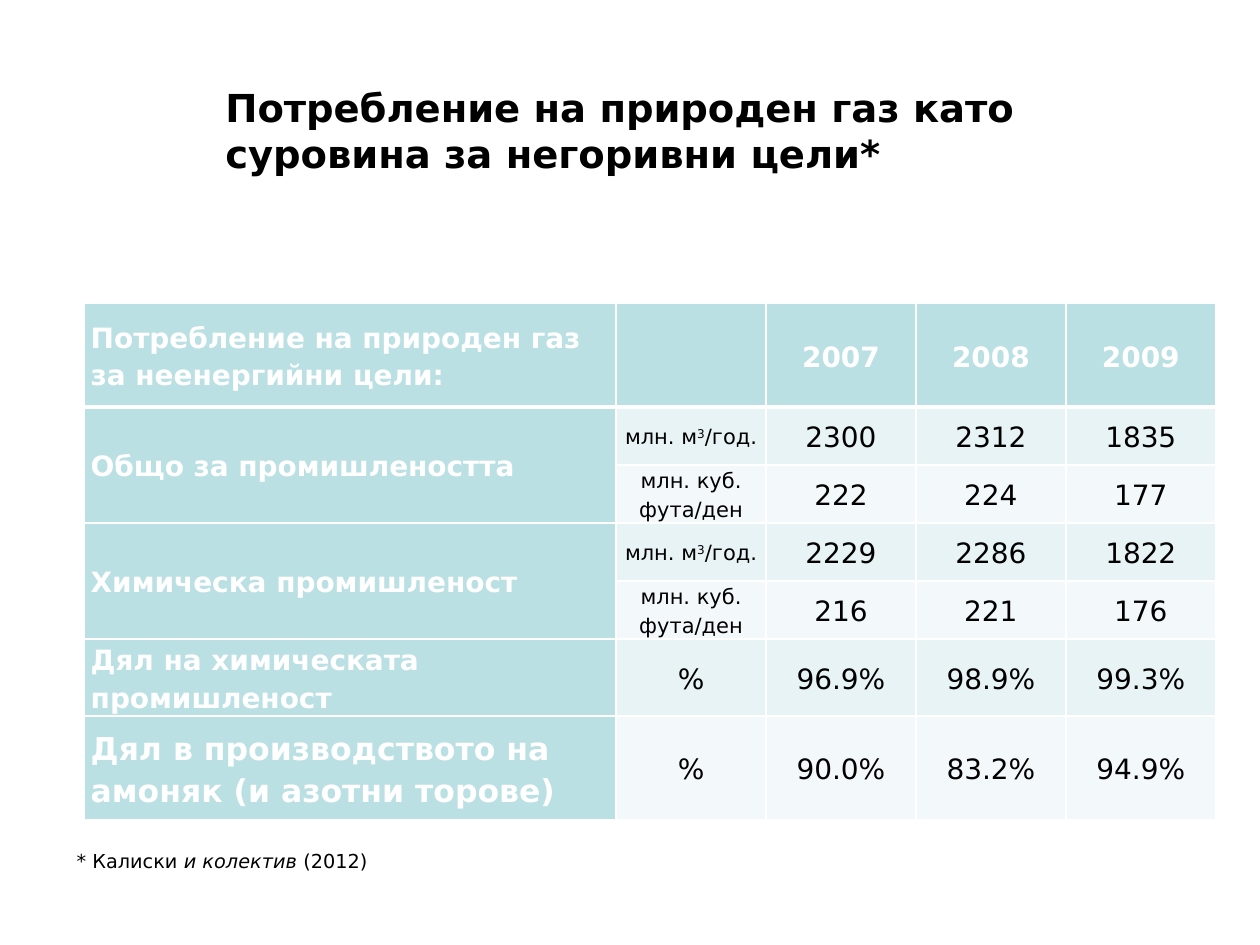
from dataclasses import dataclass

from lxml import etree
from pptx import Presentation
from pptx import util as u
from pptx.dml.color import RGBColor
from pptx.enum import text
from pptx.oxml import ns

FONT = "DejaVu Sans"
COLORS = {"ink": "000000", "white": "FFFFFF", "label": "BBE0E3",
          "odd": "E7F3F4", "even": "F3F9FA"}
YEARS = ("2007", "2008", "2009")
COLUMN_WIDTHS = (4.22, 1.19, 1.19, 1.19, 1.19)
ROW_HEIGHTS = (0.82, 0.46, 0.46, 0.46, 0.46, 0.46, 0.82)
CUBIC_METRES = ("млн. м", "3", "/год.")  # the middle part is raised
CUBIC_FEET = ("млн. куб. фута/ден",)
PERCENT = ("%",)


@dataclass
class Measure:
    unit: tuple[str, ...]
    values: tuple[str, ...]
    label: str = ""
    label_size: int = 16
    unit_size: int = 12
    label_rows: int = 1


MEASURES = [
    Measure(CUBIC_METRES, ("2300", "2312", "1835"), "Общо за промишлеността", label_rows=2),
    Measure(CUBIC_FEET, ("222", "224", "177")),
    Measure(CUBIC_METRES, ("2229", "2286", "1822"), "Химическа промишленост", label_rows=2),
    Measure(CUBIC_FEET, ("216", "221", "176")),
    Measure(PERCENT, ("96.9%", "98.9%", "99.3%"), "Дял на химическата промишленост",
            unit_size=16),
    Measure(PERCENT, ("90.0%", "83.2%", "94.9%"),
            "Дял в производството на амоняк (и азотни торове)", label_size=18, unit_size=16),
]


def set_font(paragraph, size: int, color: str, bold: bool = False) -> None:
    font = paragraph.font
    font.name, font.size, font.bold = FONT, u.Pt(size), bold
    font.color.rgb = RGBColor.from_string(COLORS[color])


def set_borders(cell, bottom: float, top: float) -> None:
    properties = cell._tc.get_or_add_tcPr()
    widths = {"lnL": 1, "lnR": 1, "lnT": top, "lnB": bottom}
    for position, (side, width) in enumerate(widths.items()):
        line = etree.Element(ns.qn(f"a:{side}"), w=str(u.Pt(width)))
        fill = etree.SubElement(line, ns.qn("a:solidFill"))
        etree.SubElement(fill, ns.qn("a:srgbClr"), val=COLORS["white"])
        properties.insert(position, line)


def fill_cell(cell, parts: tuple[str, ...], size: int, fill: str, color: str = "ink",
              bold: bool = False, centered: bool = True,
              bottom: float = 1, top: float = 1) -> None:
    cell.fill.solid()
    cell.fill.fore_color.rgb = RGBColor.from_string(COLORS[fill])
    set_borders(cell, bottom, top)
    cell.margin_left = cell.margin_right = u.Inches(0.05)
    cell.margin_top = cell.margin_bottom = 0
    cell.vertical_anchor = text.MSO_ANCHOR.MIDDLE
    paragraph = cell.text_frame.paragraphs[0]
    paragraph.alignment = text.PP_ALIGN.CENTER if centered else text.PP_ALIGN.LEFT
    paragraph.line_spacing = 1.15
    set_font(paragraph, size, color, bold)
    for index, part in enumerate(parts):
        run = paragraph.add_run()
        run.text = part
        if index == 1:
            run._r.get_or_add_rPr().set("baseline", "30000")


def add_title(slide) -> None:
    frame = slide.shapes.add_textbox(
        u.Inches(1.69), u.Inches(0.52), u.Inches(7.81), u.Inches(1.03)).text_frame
    frame.word_wrap = True
    frame.vertical_anchor = text.MSO_ANCHOR.MIDDLE
    paragraph = frame.paragraphs[0]
    paragraph.text = "Потребление на природен газ като суровина за негоривни цели*"
    set_font(paragraph, 22, "ink", bold=True)


def add_consumption_table(slide) -> None:
    table = slide.shapes.add_table(
        len(ROW_HEIGHTS), len(COLUMN_WIDTHS), u.Inches(0.67), u.Inches(2.41),
        u.Inches(sum(COLUMN_WIDTHS)), u.Inches(sum(ROW_HEIGHTS))).table
    for column, width in zip(table.columns, COLUMN_WIDTHS):
        column.width = u.Inches(width)
    for row, height in zip(table.rows, ROW_HEIGHTS):
        row.height = u.Inches(height)

    # Header row
    headings = ("Потребление на природен газ за неенергийни цели:", "", *YEARS)
    for column, heading in enumerate(headings):
        fill_cell(table.cell(0, column), (heading,) if heading else (), 16, "label",
                  "white", bold=True, centered=column > 0, bottom=3)

    # Measures, with labels spanning both units
    for row, measure in enumerate(MEASURES, start=1):
        top = 3 if row == 1 else 1
        band = "odd" if row % 2 else "even"
        label = table.cell(row, 0)
        fill_cell(label, (measure.label,) if measure.label else (), measure.label_size,
                  "label", "white", bold=True, centered=False, top=top)
        if measure.label_rows > 1:
            label.merge(table.cell(row + measure.label_rows - 1, 0))
        fill_cell(table.cell(row, 1), measure.unit, measure.unit_size, band, top=top)
        for column, value in enumerate(measure.values, start=2):
            fill_cell(table.cell(row, column), (value,), 16, band, top=top)


def add_citation(slide) -> None:
    frame = slide.shapes.add_textbox(
        u.Inches(0.51), u.Inches(6.69), u.Inches(2.54), u.Inches(0.29)).text_frame
    frame.word_wrap = False
    frame.auto_size = text.MSO_AUTO_SIZE.SHAPE_TO_FIT_TEXT
    paragraph = frame.paragraphs[0]
    set_font(paragraph, 11, "ink")
    for part, italic in (("* Калиски ", False), ("и колектив ", True), ("(2012)", False)):
        run = paragraph.add_run()
        run.text = part
        run.font.italic = italic


def main() -> None:
    presentation = Presentation()
    presentation.slide_width, presentation.slide_height = u.Inches(10), u.Inches(7.5)
    slide = presentation.slides.add_slide(presentation.slide_layouts[6])
    add_title(slide)
    add_consumption_table(slide)
    add_citation(slide)
    presentation.save("out.pptx")


if __name__ == "__main__":
    main()
